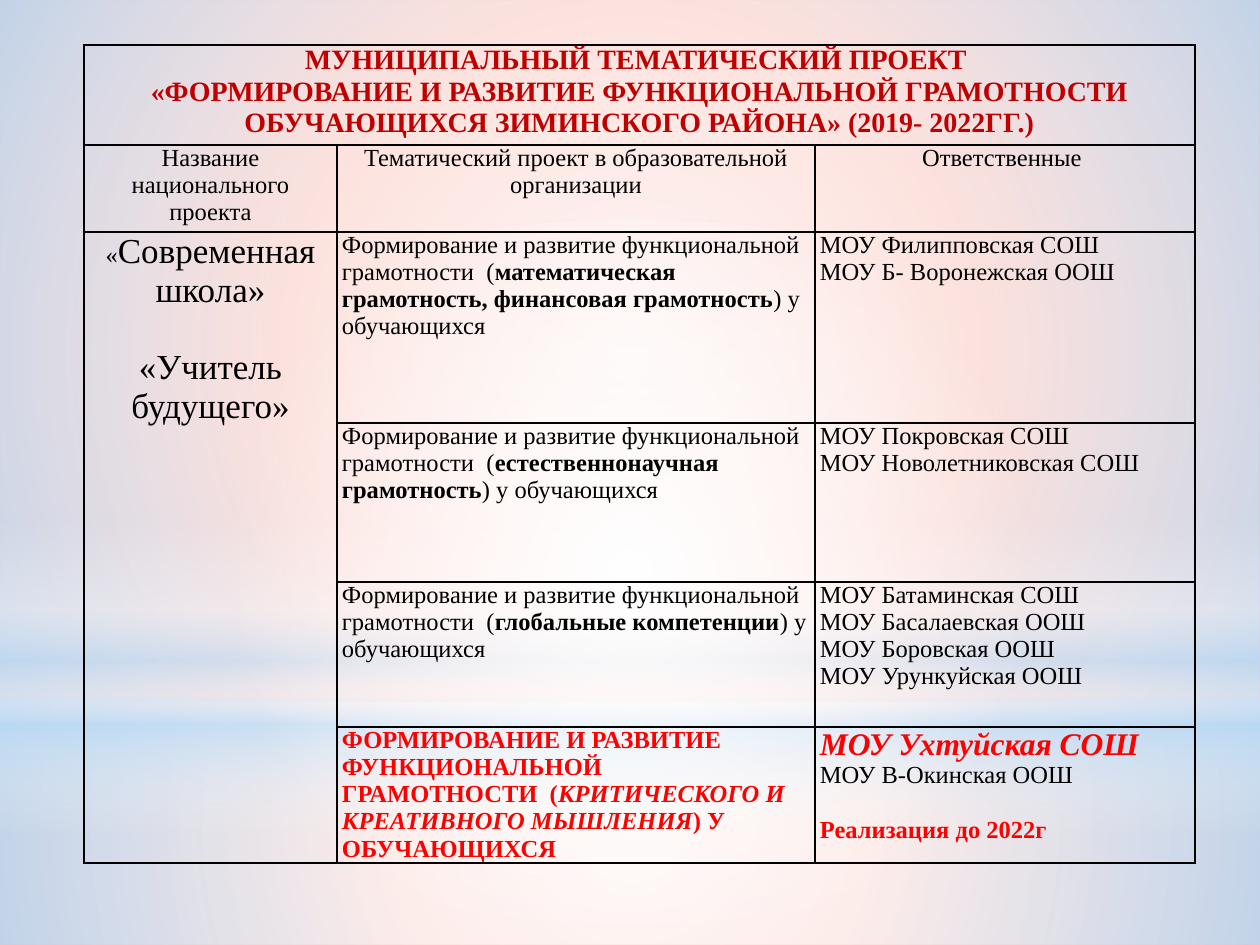
from pptx import Presentation, util as u
from pptx.dml.color import RGBColor
from pptx.enum import shapes, text
from pptx.oxml import parse_xml
from pptx.oxml.ns import nsdecls

FONT = "Times New Roman"
COLORS = {"base": "F9B3A7", "white": "FFFFFF", "sky": "B4DCFA",
          "ink": "000000", "title": "C00000", "accent": "FF0000"}
COLUMNS = [253, 478, 380]
ROWS = [100, 87, 191, 159, 145, 136]
CENTER = text.PP_ALIGN.CENTER
LEFT = text.PP_ALIGN.LEFT

PROJECT_START = "Формирование и развитие функциональной  грамотности  ("
PROJECT_END = ") у обучающихся"
PROJECTS = [
    ("математическая грамотность, финансовая грамотность",
     ["МОУ Филипповская СОШ", "МОУ Б- Воронежская ООШ"]),
    ("естественнонаучная  грамотность",
     ["МОУ Покровская СОШ", "МОУ Новолетниковская СОШ"]),
    ("глобальные компетенции",
     ["МОУ Батаминская СОШ", "МОУ Басалаевская ООШ",
      "МОУ Боровская ООШ", "МОУ Урункуйская ООШ"]),
]


def px(length):
    return u.Emu(round(length * 914400 / 126))


def add_run(paragraph, words, size=14, color="ink", bold=False, italic=False):
    run = paragraph.add_run()
    run.text = words
    run.font.name = FONT
    run.font.size = u.Pt(size)
    run.font.bold = bold
    run.font.italic = italic
    run.font.color.rgb = RGBColor.from_string(COLORS[color])


def add_glow(slide, box, stops, kind=shapes.MSO_SHAPE.RECTANGLE, linear=False):
    glow = slide.shapes.add_shape(kind, *map(px, box))
    glow.shadow.inherit = False
    glow.line.fill.background()
    glow.fill.background()
    stop_xml = "".join(
        f'<a:gs pos="{position * 1000}"><a:srgbClr val="{COLORS[color]}">'
        f'<a:alpha val="{alpha * 1000}"/></a:srgbClr></a:gs>'
        for position, color, alpha in stops)
    direction = ('<a:lin ang="5400000" scaled="0"/>' if linear else
                 '<a:path path="circle"><a:fillToRect l="50000" t="50000" '
                 'r="50000" b="50000"/></a:path>')
    gradient = parse_xml(f'<a:gradFill {nsdecls("a")} rotWithShape="1">'
                         f'<a:gsLst>{stop_xml}</a:gsLst>{direction}</a:gradFill>')
    properties = glow.element.spPr
    properties.replace(properties.find("{*}noFill"), gradient)


def add_backdrop(slide, left, top, width, height):
    slide.background.fill.solid()
    slide.background.fill.fore_color.rgb = RGBColor.from_string(COLORS["base"])
    horizon = 703
    add_glow(slide, (left, top + horizon, width, height - horizon),
             [(0, "white", 91), (37, "white", 76), (100, "sky", 79)])
    add_glow(slide, (left, top, width, horizon),
             [(0, "white", 89), (48, "white", 62), (100, "sky", 79)])
    add_glow(slide, (left, top + 519, width, 315),
             [(0, "white", 0), (29, "white", 30), (45, "sky", 40),
              (55, "white", 26), (65, "sky", 60), (100, "white", 0)], linear=True)
    add_glow(slide, (left, top + 220, width, horizon),
             [(0, "white", 100), (56, "white", 0)], kind=shapes.MSO_SHAPE.OVAL)


def format_cell(cell):
    cell.margin_left = cell.margin_right = px(5)
    cell.margin_top = cell.margin_bottom = 0
    properties = cell._tc.get_or_add_tcPr()
    for side in "LRTB":
        properties.append(parse_xml(
            f'<a:ln{side} {nsdecls("a")} w="12700"><a:solidFill>'
            f'<a:srgbClr val="{COLORS["ink"]}"/></a:solidFill></a:ln{side}>'))
    cell.fill.background()


def fill_cell(cell, paragraphs, align=LEFT, gaps=None):
    for index, runs in enumerate(paragraphs):
        frame = cell.text_frame
        paragraph = frame.add_paragraph() if index else frame.paragraphs[0]
        paragraph.alignment = align
        paragraph.space_before = u.Pt((gaps or {}).get(index, 0))
        for words, style in runs:
            add_run(paragraph, words, **style)


def add_project_table(slide, left, top):
    table = slide.shapes.add_table(
        len(ROWS), len(COLUMNS), px(left), px(top),
        px(sum(COLUMNS)), px(sum(ROWS))).table
    table.first_row = table.horz_banding = False
    for column, width in zip(table.columns, COLUMNS):
        column.width = px(width)
    for row, height in zip(table.rows, ROWS):
        row.height = px(height)
    for cell in table.iter_cells():
        format_cell(cell)
    table.cell(0, 0).merge(table.cell(0, 2))
    table.cell(2, 0).merge(table.cell(5, 0))

    heading = dict(size=16, color="title", bold=True)
    fill_cell(table.cell(0, 0), [
        [("МУНИЦИПАЛЬНЫЙ ТЕМАТИЧЕСКИЙ ПРОЕКТ ", heading)],
        [("«ФОРМИРОВАНИЕ И РАЗВИТИЕ ФУНКЦИОНАЛЬНОЙ ГРАМОТНОСТИ "
          "ОБУЧАЮЩИХСЯ ЗИМИНСКОГО РАЙОНА» (2019- 2022ГГ.)", heading)]], CENTER)
    labels = ["Название национального проекта",
              "Тематический проект в образовательной организации",
              "Ответственные "]
    for column, label in enumerate(labels):
        fill_cell(table.cell(1, column), [[(label, {})]], CENTER)

    national = dict(size=20)
    fill_cell(table.cell(2, 0), [
        [("«", {}), ("Современная школа»", national)],
        [("«Учитель будущего»", national)]], CENTER, gaps={1: 22})
    for row, (skill, schools) in enumerate(PROJECTS, start=2):
        fill_cell(table.cell(row, 1), [
            [(PROJECT_START, {}), (skill, dict(bold=True)), (PROJECT_END, {})]])
        fill_cell(table.cell(row, 2), [[(school, {})] for school in schools])

    accent = dict(color="accent", bold=True)
    fill_cell(table.cell(5, 1), [
        [(PROJECT_START.upper(), accent),
         ("КРИТИЧЕСКОГО И  КРЕАТИВНОГО МЫШЛЕНИЯ", dict(accent, italic=True)),
         (PROJECT_END.upper(), accent)]])
    fill_cell(table.cell(5, 2), [
        [("МОУ Ухтуйская СОШ", dict(accent, size=18, italic=True))],
        [("МОУ В-Окинская ООШ", {})],
        [("Реализация до 2022г", accent)]], gaps={2: 16})


def main():
    deck = Presentation()
    deck.slide_width, deck.slide_height = px(1260), px(945)
    slide = deck.slides.add_slide(deck.slide_layouts[6])
    add_backdrop(slide, 0, 0, 1260, 945)
    add_project_table(slide, 84, 45)
    deck.save("out.pptx")


if __name__ == "__main__":
    main()
